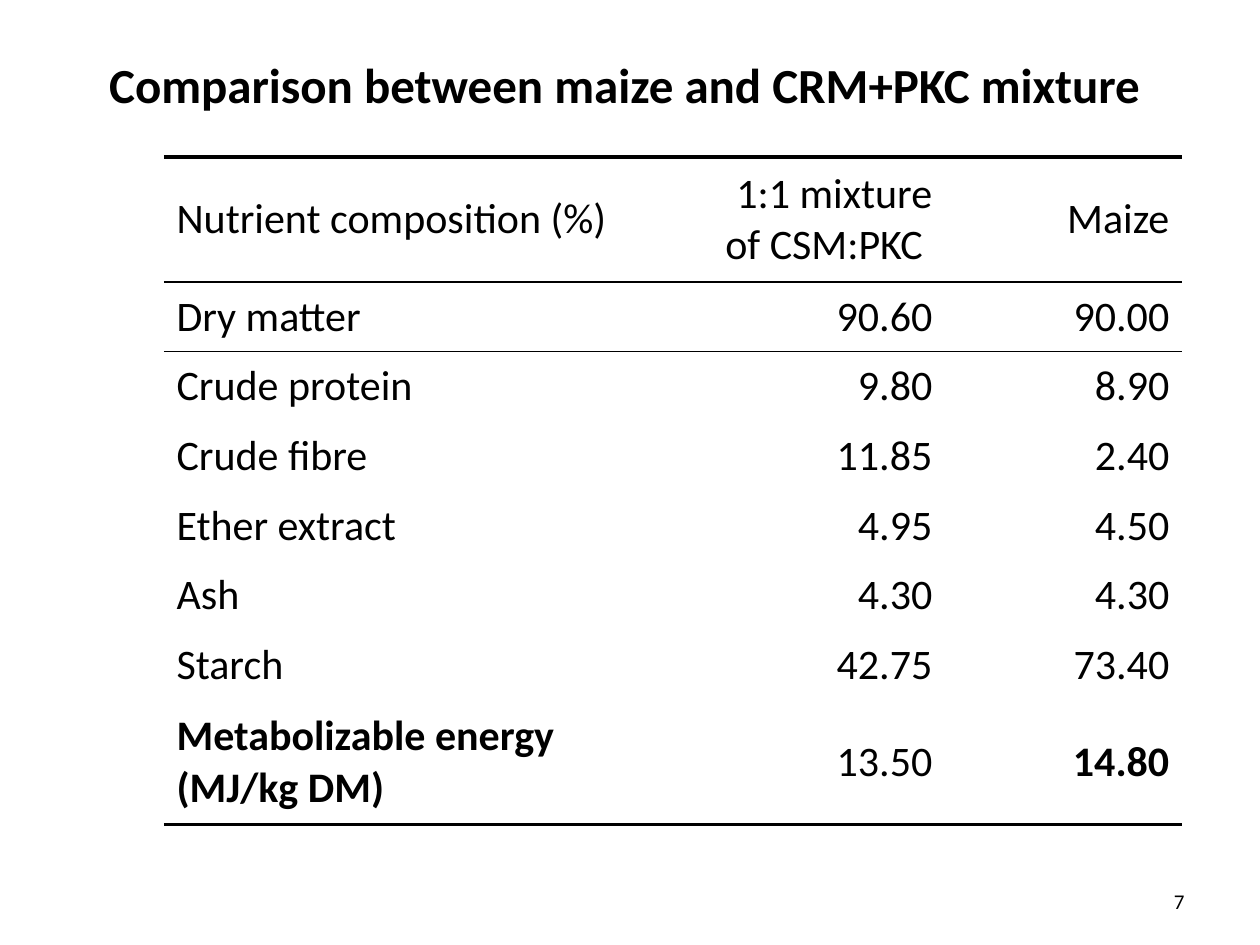
from lxml import etree
from pptx import Presentation
from pptx import util as u
from pptx.dml.color import RGBColor
from pptx.enum import text
from pptx.oxml.ns import qn

PX = 914400 / 126
BLACK = RGBColor(0, 0, 0)
WHITE = RGBColor(255, 255, 255)
FONT = "Calibri"
COLUMNS = (525, 256, 237)
TALL_ROW = 125
ROWS = (
    ("Nutrient composition (%)", "1:1 mixture\n of CSM:PKC ", "Maize"),
    ("Dry matter", "90.60", "90.00"),
    ("Crude protein", "9.80", "8.90"),
    ("Crude fibre", "11.85", "2.40"),
    ("Ether extract", "4.95", "4.50"),
    ("Ash", "4.30", "4.30"),
    ("Starch", "42.75", "73.40"),
    ("Metabolizable energy\n(MJ/kg DM)", "13.50", "14.80"),
)
RULES = {0: 2, 1: 1, 2: 1, len(ROWS): 2}


def px(n):
    """Turn px into EMU."""
    return u.Emu(round(n * PX))


def format_text(tf, size, align, bold=False):
    """Give all text of a frame one font, size, weight and alignment."""
    for p in tf.paragraphs:
        p.alignment = align
        for r in p.runs:
            r.font.name, r.font.size, r.font.bold = FONT, u.Pt(size), bold
            r.font.color.rgb = BLACK


def set_border(cell, side, width, index):
    """Draw one black border of a cell, or clear it when the width is 0."""
    ln = etree.Element(qn(f"a:ln{side}"), w=str(u.Pt(width)))
    if width:
        fill = etree.SubElement(ln, qn("a:solidFill"))
        etree.SubElement(fill, qn("a:srgbClr"), val=str(BLACK))
    else:
        etree.SubElement(ln, qn("a:noFill"))
    cell._tc.get_or_add_tcPr().insert(index, ln)


def add_title(s, x, y, w, h):
    """Place the slide title in its box."""
    sp = s.shapes.title
    sp.left, sp.top, sp.width, sp.height = px(x), px(y), px(w), px(h)
    tf = sp.text_frame
    tf.text = "Comparison between maize and CRM+PKC mixture "
    tf.vertical_anchor = text.MSO_ANCHOR.MIDDLE
    format_text(tf, 28, text.PP_ALIGN.CENTER, True)


def add_nutrients(s, x, y, w, h):
    """Place the nutrient table in its box."""
    last = len(ROWS) - 1
    table = s.shapes.add_table(
        len(ROWS), len(COLUMNS), px(x), px(y), px(w), px(h)).table
    table.first_row = table.horz_banding = False
    for column, width in zip(table.columns, COLUMNS):
        column.width = px(width)
    for i, values in enumerate(ROWS):
        tall = i in (0, last)
        table.rows[i].height = px(
            TALL_ROW if tall else (h - 2 * TALL_ROW) / (last - 1))
        for j, value in enumerate(values):
            cell = table.cell(i, j)
            cell.text_frame.text = value
            cell.vertical_anchor = text.MSO_ANCHOR.MIDDLE
            align = text.PP_ALIGN.RIGHT if j else text.PP_ALIGN.LEFT
            format_text(cell.text_frame, 24, align, i == last and j != 1)
            cell.fill.solid()
            cell.fill.fore_color.rgb = WHITE
            widths = (0, 0, RULES.get(i, 0), RULES.get(i + 1, 0))
            for index, (side, width) in enumerate(zip("LRTB", widths)):
                set_border(cell, side, width, index)


def add_page_number(s, x, y, w, h):
    """Place the page number in its box."""
    tf = s.shapes.add_textbox(px(x), px(y), px(w), px(h)).text_frame
    tf.word_wrap = True
    tf.text = "7"
    tf.vertical_anchor = text.MSO_ANCHOR.MIDDLE
    format_text(tf, 12, text.PP_ALIGN.RIGHT)


def main():
    """Build and save the slide."""
    prs = Presentation()
    prs.slide_width, prs.slide_height = px(1260), px(945)
    s = prs.slides.add_slide(prs.slide_layouts[5])
    add_title(s, 63, 38, 1134, 91)
    add_nutrients(s, 164, 157, sum(COLUMNS), 668)
    add_page_number(s, 903, 876, 294, 50)
    prs.save("out.pptx")


if __name__ == "__main__":
    main()
